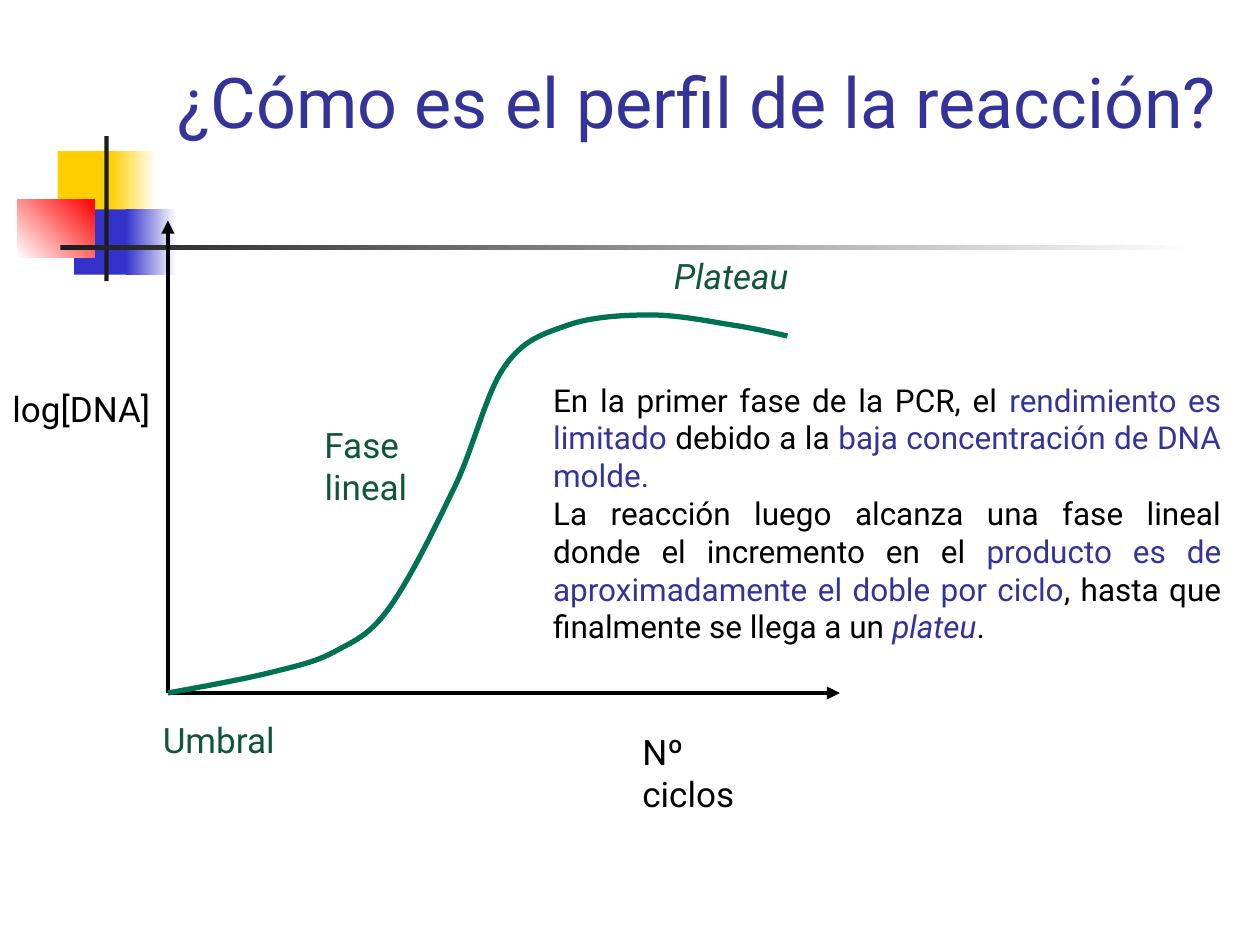
import pptx
import pptx.util
import pptx.dml.color
import pptx.enum.shapes
import pptx.enum.text
import pptx.oxml
import pptx.oxml.ns
from dataclasses import dataclass

Pt = pptx.util.Pt
Shape = pptx.enum.shapes.MSO_SHAPE
Align = pptx.enum.text.PP_ALIGN


@dataclass(frozen=True)
class Theme:
    """Colours, font and type sizes of the slide."""
    font: str = "Roboto"
    title: int = 40
    label: int = 20
    body: int = 18
    black: str = "000000"
    indigo: str = "333399"
    green: str = "105638"
    curve: str = "007254"
    gold: str = "FFCF01"
    blue: str = "3333CC"
    red: str = "FF0000"
    dark: str = "1C1C1C"
    white: str = "FFFFFF"


theme = Theme()


def rgb(code):
    """Turn a hex code into a colour."""
    return pptx.dml.color.RGBColor.from_string(code)


def add_text(slide, box, paras, size, align=Align.LEFT):
    """Write paragraphs of (text, colour, italic) runs in a box."""
    frame = slide.shapes.add_textbox(*map(Pt, box)).text_frame
    frame.word_wrap = True
    for i, runs in enumerate(paras):
        para = frame.paragraphs[0] if i == 0 else frame.add_paragraph()
        para.alignment = align
        for text, colour, slant in runs:
            run = para.add_run()
            run.text = text
            run.font.name = theme.font
            run.font.size = Pt(size)
            run.font.italic = slant
            run.font.color.rgb = rgb(colour)


def add_block(slide, box, start, end=None, angle=0):
    """Draw a borderless rectangle, plain or fading from start to end."""
    block = slide.shapes.add_shape(Shape.RECTANGLE, *map(Pt, box))
    block.shadow.inherit = False
    block.line.fill.background()
    if end is None:
        block.fill.solid()
        block.fill.fore_color.rgb = rgb(start)
        return
    block.fill.gradient()
    block.fill.gradient_angle = angle
    for stop, colour in zip(block.fill.gradient_stops, (start, end)):
        stop.color.rgb = rgb(colour)


def add_motif(slide, box):
    """Place the coloured squares and the crossing bars."""
    left, top, width, height = box
    blocks = [
        ((23, 8.6, 34.5, 37.4), theme.gold),
        ((53.3, 8.6, 26, 37.4), theme.gold, theme.white),
        ((32.4, 41.8, 33, 37.4), theme.blue),
        ((62, 41.8, 28.8, 37.4), theme.blue, theme.white),
        ((0, 36, 44, 33.4), theme.white, theme.red, 45),
        ((49.7, 0, 2.5, height), theme.dark),
        ((24.5, 62.4, width - 24.5, 2.5), theme.dark, theme.white),
    ]
    for (x, y, w, h), *paint in blocks:
        add_block(slide, (left + x, top + y, w, h), *paint)


def add_axis(slide, start, end):
    """Draw an axis with its arrowhead at the end."""
    axis = slide.shapes.add_connector(
        pptx.enum.shapes.MSO_CONNECTOR.STRAIGHT, *map(Pt, start + end))
    axis.line.color.rgb = rgb(theme.black)
    axis.line.width = Pt(2.5)
    space = pptx.oxml.ns.nsdecls("a")
    axis.line._get_or_add_ln().append(
        pptx.oxml.parse_xml(f'<a:tailEnd {space} type="triangle"/>'))
    axis._element.spPr.append(pptx.oxml.parse_xml(f"<a:effectLst {space}/>"))


def add_curve(slide, left, base):
    """Draw the smooth amplification curve from the axes' origin."""
    steps = [
        (22, 4), (44, 8), (60, 12), (76, 16), (85, 18), (96, 24),
        (107, 30), (115, 33), (126, 48), (137, 63), (151, 91), (162, 114),
        (174, 137), (181, 170), (192, 186), (203, 202), (214, 205), (228, 210),
        (242, 215), (260, 216), (276, 216), (292, 216), (311, 212), (324, 210),
        (337, 208), (349, 205), (354, 204),
    ]
    pen = slide.shapes.build_freeform(Pt(left), Pt(base))
    pen.add_line_segments(
        [(Pt(left + x), Pt(base - y)) for x, y in steps], close=False)
    curve = pen.convert_to_shape()
    curve.shadow.inherit = False
    curve.fill.background()
    curve.line.color.rgb = rgb(theme.curve)
    curve.line.width = Pt(3)
    lines = curve._element.findall(".//" + pptx.oxml.ns.qn("a:lnTo"))
    for i in range(0, len(lines), 3):
        bend = pptx.oxml.parse_xml(
            f'<a:cubicBezTo {pptx.oxml.ns.nsdecls("a")}/>')
        lines[i].addprevious(bend)
        for line in lines[i:i + 3]:
            bend.append(line[0])
            line.getparent().remove(line)


def add_graph(slide, box):
    """Place the axes, the curve and their labels."""
    left, top, width, height = box
    base = top + height
    add_axis(slide, (left, base), (left, top))
    add_axis(slide, (left, base), (left + width, base))
    add_curve(slide, left, base)
    black, green = theme.black, theme.green
    labels = [
        ((-96, 92, 96.5, 31), ["log[DNA]"], black, False, Align.LEFT),
        ((264, 288, 91.5, 55), ["Nº ciclos"], black, False, Align.LEFT),
        ((282, 16, 83.5, 31), ["Plateau"], green, True, Align.LEFT),
        ((79.7, 112.3, 67, 55), ["Fase ", "lineal"], green, False, Align.CENTER),
        ((-12, 281, 82, 31), ["Umbral"], green, False, Align.CENTER),
    ]
    for (x, y, w, h), lines, colour, slant, align in labels:
        add_text(slide, (left + x, top + y, w, h),
                 [[(line, colour, slant)] for line in lines],
                 theme.label, align)


def add_title(slide, box):
    """Place the slide title."""
    text = "¿Cómo es el perfil de la reacción?"
    add_text(slide, box, [[(text, theme.indigo, False)]], theme.title)


def add_body(slide, box):
    """Place the justified explanation."""
    black, indigo = theme.black, theme.indigo
    paras = [
        [("En la primer fase de la PCR, el ", black, False),
         ("rendimiento es limitado ", indigo, False),
         ("debido a la ", black, False),
         ("baja concentración de DNA molde. ", indigo, False)],
        [("La reacción luego alcanza una fase lineal donde el incremento en el ",
          black, False),
         ("producto es de aproximadamente el doble por ciclo", indigo, False),
         (", hasta que finalmente se llega a un ", black, False),
         ("plateu", indigo, True),
         (". ", black, False)],
    ]
    add_text(slide, box, paras, theme.body, Align.JUSTIFY)


def main():
    """Build the slide and save it."""
    deck = pptx.Presentation()
    deck.slide_width, deck.slide_height = Pt(720), Pt(540)
    slide = deck.slides.add_slide(deck.slide_layouts[6])
    add_motif(slide, (10, 77.8, 672.5, 82.8))
    add_graph(slide, (96, 126, 384, 270))
    add_body(slide, (309, 214, 396, 160))
    add_title(slide, (94.5, 30, 620.5, 55.5))
    deck.save("out.pptx")


if __name__ == "__main__":
    main()
